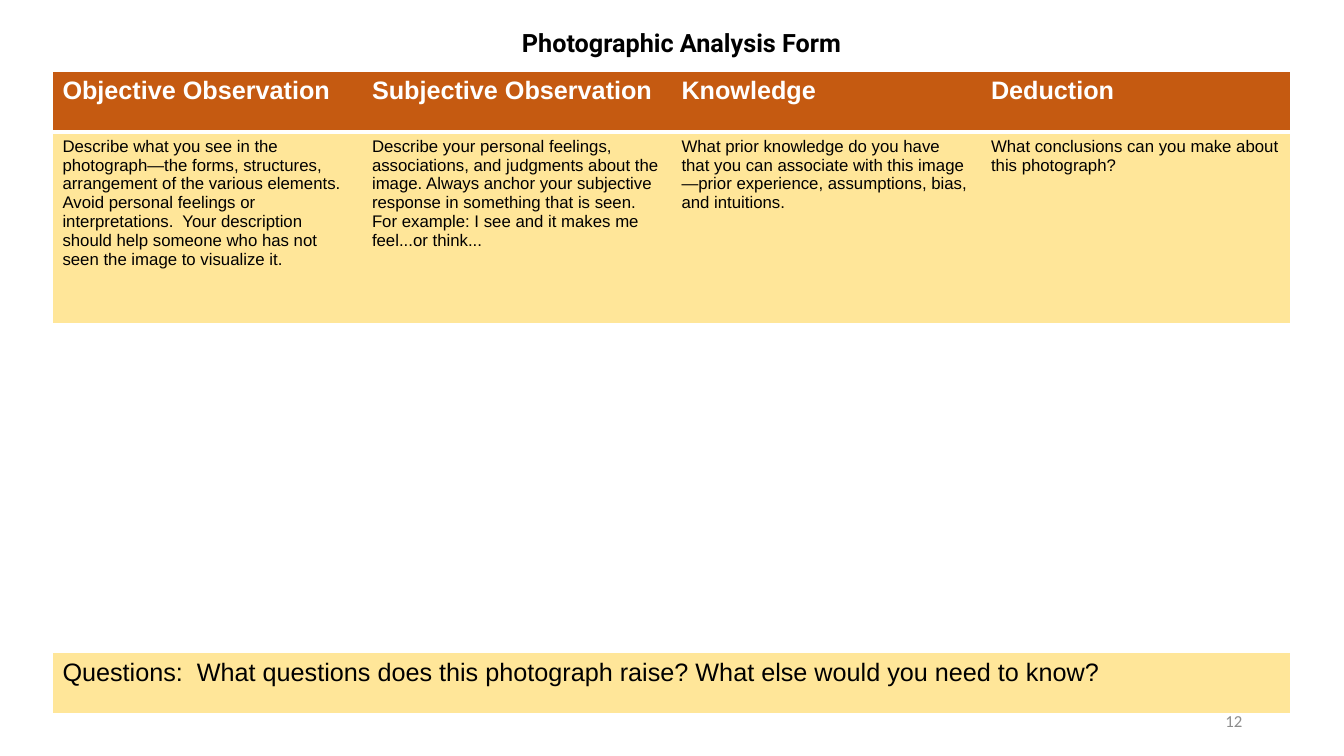
"""Build the photographic analysis form slide."""
import dataclasses

import lxml.etree
import pptx
import pptx.dml.color
import pptx.enum.text
import pptx.oxml.ns
import pptx.slide
import pptx.table
import pptx.text.text
import pptx.util

Inches = pptx.util.Inches
COLORS = {"header": "C55A11", "prompt": "FFE699", "blank": "FFFFFF",
          "border": "FFFFFF", "text": "000000", "number": "8C8C8C"}
ROW_HEIGHTS = (0.6, 1.89, 3.28, 0.6)
COLUMN_WIDTH = 3.07
NO_STYLE = "{2D5ABB26-0587-4C30-8999-92F81FD0307C}"


@dataclasses.dataclass(frozen=True)
class Section:
    """A heading of the form with its prompt."""
    heading: str
    prompt: str


@dataclasses.dataclass(frozen=True)
class TextStyle:
    """Font settings of a paragraph."""
    size: int
    color: str = "text"
    bold: bool = False
    family: str = "Arial"


SECTIONS = (
    Section("Objective Observation",
            "Describe what you see in the photograph—the forms, structures, arrangement of the "
            "various elements. Avoid personal feelings or interpretations.  Your description "
            "should help someone who has not seen the image to visualize it."),
    Section("Subjective Observation",
            "Describe your personal feelings, associations, and judgments about the image. Always "
            "anchor your subjective response in something that is seen. For example: I see and it "
            "makes me feel...or think..."),
    Section("Knowledge",
            "What prior knowledge do you have that you can associate with this image—prior "
            "experience, assumptions, bias, and intuitions."),
    Section("Deduction", "What conclusions can you make about this photograph?"),
)
QUESTIONS = "Questions:  What questions does this photograph raise? What else would you need to know?"
HEADING = TextStyle(18, "border", True)
PROMPT = TextStyle(12)
QUESTION = TextStyle(18)


def rgb(name: str) -> pptx.dml.color.RGBColor:
    """Return the named colour."""
    return pptx.dml.color.RGBColor.from_string(COLORS[name])


def write(frame: pptx.text.text.TextFrame, text: str, style: TextStyle,
          align: pptx.enum.text.PP_ALIGN = pptx.enum.text.PP_ALIGN.LEFT) -> None:
    """Put one styled paragraph into a text frame."""
    frame.text = text
    paragraph = frame.paragraphs[0]
    paragraph.alignment = align
    font = paragraph.font
    font.size, font.bold, font.name = pptx.util.Pt(style.size), style.bold, style.family
    font.color.rgb = rgb(style.color)


def format_cell(cell: pptx.table._Cell, fill: str, borders: dict[str, int]) -> None:
    """Give a cell its borders, by side in points, and its fill."""
    properties = cell._tc.get_or_add_tcPr()
    qn = pptx.oxml.ns.qn
    for side in "LRTB":
        width = pptx.util.Pt(borders.get(side, 0))
        line = lxml.etree.SubElement(properties, qn(f"a:ln{side}"), w=str(int(width)))
        if width:
            solid = lxml.etree.SubElement(line, qn("a:solidFill"))
            lxml.etree.SubElement(solid, qn("a:srgbClr"), val=COLORS["border"])
        else:
            lxml.etree.SubElement(line, qn("a:noFill"))
    cell.fill.solid()
    cell.fill.fore_color.rgb = rgb(fill)


def add_form(slide: pptx.slide.Slide) -> None:
    """Add the table of sections with the closing questions row."""
    last_row, last_column = len(ROW_HEIGHTS) - 1, len(SECTIONS) - 1
    form = slide.shapes.add_table(
        len(ROW_HEIGHTS), len(SECTIONS), Inches(0.52), Inches(0.71),
        Inches(COLUMN_WIDTH * len(SECTIONS)), Inches(sum(ROW_HEIGHTS))).table
    form.first_row = form.horz_banding = False
    form._tbl.tblPr.find(pptx.oxml.ns.qn("a:tableStyleId")).text = NO_STYLE
    for column in form.columns:
        column.width = Inches(COLUMN_WIDTH)
    fills = ("header", "prompt", "blank", "prompt")
    for r, (height, fill) in enumerate(zip(ROW_HEIGHTS, fills)):
        form.rows[r].height = Inches(height)
        for c in range(len(SECTIONS)):
            borders = {"L": int(c == 0), "R": int(c == last_column), "T": int(r == 0),
                       "B": {0: 3, last_row: 1}.get(r, 0)}
            format_cell(form.cell(r, c), fill, borders)
    for c, section in enumerate(SECTIONS):
        write(form.cell(0, c).text_frame, section.heading, HEADING)
        write(form.cell(1, c).text_frame, section.prompt, PROMPT)
    questions = form.cell(last_row, 0)
    questions.merge(form.cell(last_row, last_column))
    write(questions.text_frame, QUESTIONS, QUESTION)


def main() -> None:
    """Create and save the presentation."""
    deck = pptx.Presentation()
    deck.slide_width, deck.slide_height = Inches(13.33), Inches(7.5)
    slide = deck.slides.add_slide(deck.slide_layouts.get_by_name("Title Only"))

    title = slide.shapes.title
    title.left, title.top = Inches(4.56), Inches(0.22)
    title.width, title.height = Inches(4.4), Inches(0.4)
    title.text_frame.auto_size = pptx.enum.text.MSO_AUTO_SIZE.NONE
    title.text_frame.vertical_anchor = pptx.enum.text.MSO_ANCHOR.TOP
    write(title.text_frame, "Photographic Analysis Form",
          TextStyle(18, bold=True, family="Roboto"), pptx.enum.text.PP_ALIGN.CENTER)

    add_form(slide)

    page_number = slide.shapes.add_textbox(Inches(9.42), Inches(6.95), Inches(3), Inches(0.4))
    page_number.text_frame.word_wrap = True
    page_number.text_frame.vertical_anchor = pptx.enum.text.MSO_ANCHOR.MIDDLE
    write(page_number.text_frame, "12", TextStyle(12, "number", family="Calibri"),
          pptx.enum.text.PP_ALIGN.RIGHT)
    deck.save("out.pptx")


if __name__ == "__main__":
    main()
